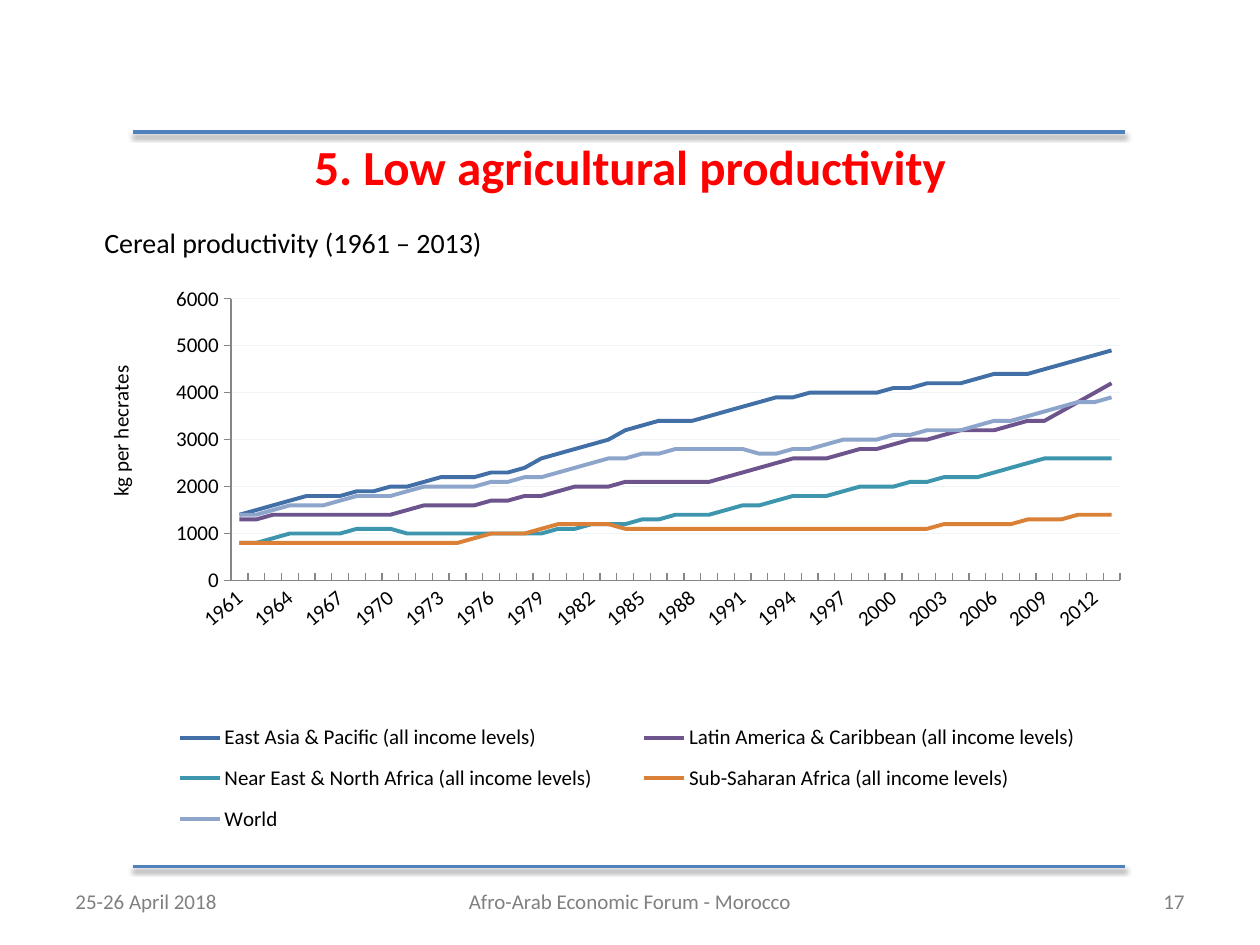
from lxml import etree
from pptx import Presentation
from pptx.chart.data import CategoryChartData
from pptx.dml.color import RGBColor
from pptx.enum import chart as ch, shapes, text
from pptx.oxml import parse_xml
from pptx.oxml.ns import nsdecls, qn
from pptx.util import Pt

COLORS = {
    "rule": "4F81BD", "title": "FF0000", "body": "000000", "footer": "808080",
    "axis": "868686", "grid": "EFF4F9",
}
FONT = "Calibri"

# Series name, line colour, cereal yield in hundreds of kg every STEP years
YEARS = range(1961, 2014)
STEP = 4
YIELDS = [
    ("East Asia & Pacific (all income levels)", "416FA6",
     [14, 18, 19, 22, 23, 28, 33, 35, 39, 40, 41, 43, 45, 49]),
    ("Latin America & Caribbean (all income levels)", "6E548D",
     [13, 14, 14, 16, 17, 20, 21, 21, 25, 27, 30, 32, 34, 42]),
    ("Near East & North Africa (all income levels)", "3D96AE",
     [8, 10, 11, 10, 10, 11, 13, 14, 17, 19, 21, 22, 26, 26]),
    ("Sub-Saharan Africa (all income levels)", "DA8137",
     [8, 8, 8, 8, 10, 12, 11, 11, 11, 11, 11, 12, 13, 14]),
    ("World", "8EA5CB",
     [14, 16, 18, 20, 21, 24, 27, 28, 27, 30, 31, 33, 36, 39]),
]


def yearly(hundreds):
    """Fill the years between the known ones linearly, in kg."""
    values = [100 * (start + (end - start) * year / STEP)
              for start, end in zip(hundreds, hundreds[1:])
              for year in range(STEP)]
    return [round(value, -2) for value in values + [100 * hundreds[-1]]]


def rgb(name):
    return RGBColor.from_string(COLORS.get(name, name))


def style_font(font, size, color="body", bold=False):
    font.name, font.size, font.bold = FONT, Pt(size), bold
    font.color.rgb = rgb(color)


def write(frame, words, size, color="body", bold=False,
          align=text.PP_ALIGN.LEFT, anchor=text.MSO_ANCHOR.MIDDLE):
    frame.word_wrap = True
    frame.vertical_anchor = anchor
    frame.text = words
    frame.paragraphs[0].alignment = align
    style_font(frame.paragraphs[0].runs[0].font, size, color, bold)


def add_text(slide, box, words, size, **style):
    label = slide.shapes.add_textbox(*map(Pt, box))
    write(label.text_frame, words, size, **style)


def add_rule(slide, left, right, y):
    rule = slide.shapes.add_connector(
        shapes.MSO_CONNECTOR.STRAIGHT, Pt(left), Pt(y), Pt(right), Pt(y))
    rule.line.color.rgb = rgb("rule")
    rule.line.width = Pt(2)
    rule._element.spPr.append(parse_xml(
        f'<a:effectLst {nsdecls("a")}><a:outerShdw blurRad="40000" dist="20000" '
        'dir="5400000" rotWithShape="0"><a:srgbClr val="000000">'
        '<a:alpha val="38000"/></a:srgbClr></a:outerShdw></a:effectLst>'))


def set_layout(parent, index, inner=False, **fractions):
    """Place a chart part by fractions of the chart space."""
    for old in parent.findall(qn("c:layout")):
        parent.remove(old)
    layout = etree.Element(qn("c:layout"))
    manual = etree.SubElement(layout, qn("c:manualLayout"))
    settings = {"layoutTarget": "inner"} if inner else {}
    settings |= {"xMode": "edge", "yMode": "edge"} | fractions
    for tag, value in settings.items():
        etree.SubElement(manual, qn(f"c:{tag}")).set("val", str(value))
    parent.insert(index, layout)


def add_heading(slide, box):
    title = slide.shapes.title
    title.left, title.top, title.width, title.height = map(Pt, box)
    write(title.text_frame, "5. Low agricultural productivity", 28,
          color="title", bold=True, align=text.PP_ALIGN.CENTER)


def format_axes(chart):
    years, yields = chart.category_axis, chart.value_axis
    for axis in (years, yields):
        style_font(axis.tick_labels.font, 12)
        axis.format.line.color.rgb = rgb("axis")
        axis.minor_tick_mark = ch.XL_TICK_MARK.NONE

    # Every third year is labelled, on a slant
    years.major_tick_mark = ch.XL_TICK_MARK.INSIDE
    years_xml = years._element
    years_xml.find(f"{qn('c:txPr')}/{qn('a:bodyPr')}").set("rot", "-2400000")
    skip = etree.Element(qn("c:tickLblSkip"), val="3")
    years_xml.find(qn("c:noMultiLvlLbl")).addprevious(skip)

    yields.major_tick_mark = ch.XL_TICK_MARK.OUTSIDE
    yields.minimum_scale, yields.maximum_scale, yields.major_unit = 0, 6000, 1000
    yields.major_gridlines.format.line.color.rgb = rgb("grid")
    yields.major_gridlines.format.line.width = Pt(0.75)
    unit = yields.axis_title
    unit.text_frame.text = "kg per hecrates"
    style_font(unit.text_frame.paragraphs[0].runs[0].font, 12)
    set_layout(unit._element, 1, x=0.01, y=0.17)


def add_yield_chart(slide, box):
    data = CategoryChartData(number_format="General")
    data.categories = [str(year) for year in YEARS]
    for name, _, hundreds in YIELDS:
        data.add_series(name, yearly(hundreds))
    chart = slide.shapes.add_chart(
        ch.XL_CHART_TYPE.LINE, *map(Pt, box), data).chart
    style_font(chart.font, 10)
    chart.has_title = False
    chart.plots[0].vary_by_categories = False
    for series, (_, color, _) in zip(chart.plots[0].series, YIELDS):
        series.smooth = False
        series.marker.style = ch.XL_MARKER_STYLE.NONE
        series.format.line.color.rgb = rgb(color)
        series.format.line.width = Pt(2.25)
    format_axes(chart)
    plot_area = chart._chartSpace.chart.plotArea
    set_layout(plot_area, 0, inner=True, x=0.13, y=0.065, w=0.83, h=0.47)

    chart.has_legend = True
    legend = chart.legend
    legend.position = ch.XL_LEGEND_POSITION.RIGHT
    legend.include_in_layout = False
    style_font(legend.font, 12)
    set_layout(legend._element, 1, x=0.04, y=0.75, w=0.92, h=0.23)


def add_footer(slide, left, top, width, height):
    side, middle = 168, 228
    align = text.PP_ALIGN
    parts = [
        (left, side, "25-26 April 2018", align.LEFT),
        (left + (width - middle) / 2, middle,
         "Afro-Arab Economic Forum - Morocco", align.CENTER),
        (left + width - side, side, "17", align.RIGHT),
    ]
    for x, w, words, alignment in parts:
        add_text(slide, (x, top, w, height), words, 12,
                 color="footer", align=alignment)


def main():
    deck = Presentation()
    deck.slide_width, deck.slide_height = Pt(720), Pt(540)
    slide = deck.slides.add_slide(deck.slide_layouts.get_by_name("Title Only"))

    # Rules above and below the content
    for y in (75.6, 495.2):
        add_rule(slide, 76, 643, y)

    add_heading(slide, (36.5, 81, 647, 28))
    add_footer(slide, 36, 500.5, 648, 28.75)
    add_yield_chart(slide, (52.5, 148.5, 612, 342.5))
    add_text(slide, (52.5, 125.5, 583, 26.5),
             "Cereal productivity (1961 – 2013)", 16,
             anchor=text.MSO_ANCHOR.TOP)
    deck.save("out.pptx")


if __name__ == "__main__":
    main()
